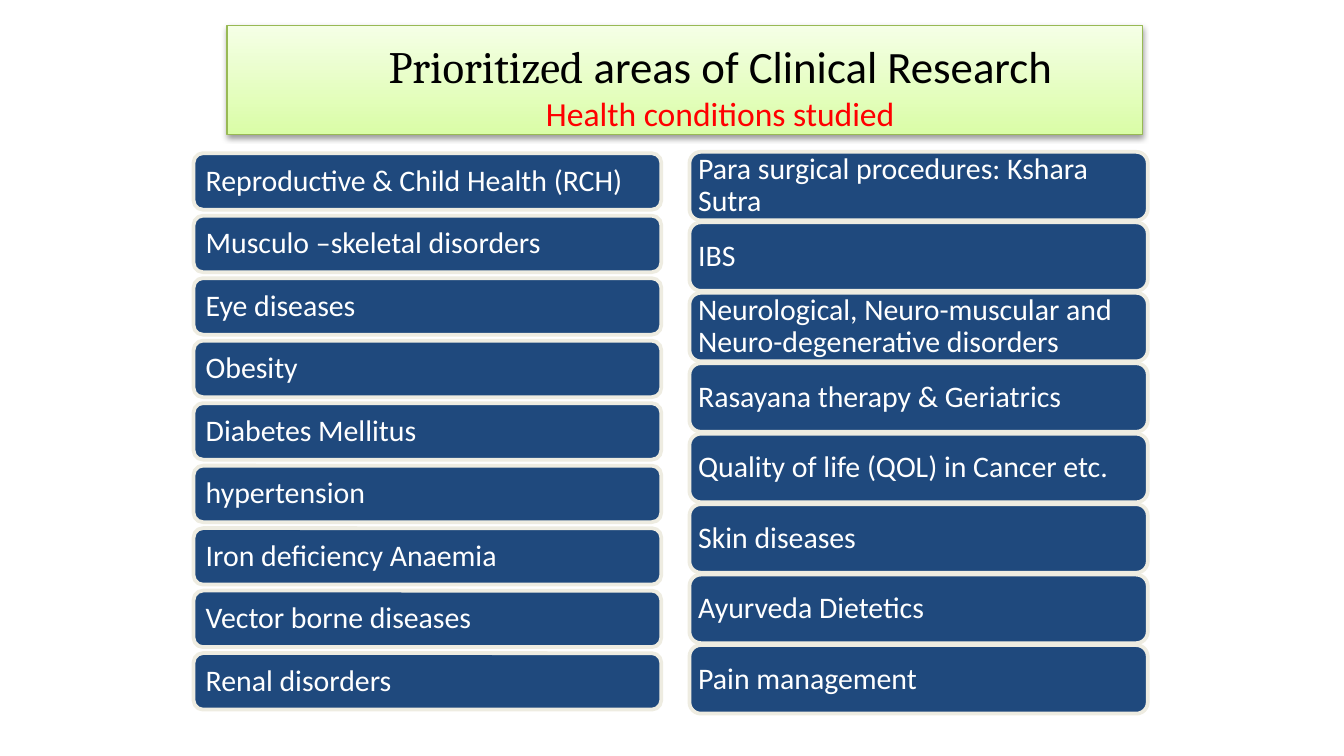
from dataclasses import dataclass

from lxml.etree import SubElement
from pptx import Presentation
from pptx.dml.color import RGBColor
from pptx.enum.shapes import MSO_SHAPE
from pptx.enum.text import MSO_ANCHOR, PP_ALIGN
from pptx.oxml.ns import qn
from pptx.util import Inches, Pt


@dataclass(frozen=True)
class Theme:
    """Colours, fonts and type sizes of the slide."""
    navy: str = "1F497D"
    cream: str = "EEECE1"
    white: str = "FFFFFF"
    black: str = "000000"
    red: str = "FF0000"
    green_line: str = "98B954"
    green_light: str = "F5FFE6"
    green_deep: str = "DAFDA7"
    body_font: str = "Calibri"
    accent_font: str = "Cambria"
    title_size: int = 24
    subtitle_size: int = 18
    item_size: int = 16


class SlideBuilder:
    """Draws styled elements on the current slide."""

    def __init__(self, slide, theme):
        self.slide = slide
        self.theme = theme

    def box(self, kind, place, line_color, line_width, frame_format):
        """Add an outlined shape and apply the text frame format."""
        shape = self.slide.shapes.add_shape(kind, *map(Inches, place))
        shape.line.color.rgb = RGBColor.from_string(line_color)
        shape.line.width = Pt(line_width)
        shape.shadow.inherit = False
        for name, value in frame_format.items():
            setattr(shape.text_frame, name, value)
        return shape

    def run(self, paragraph, text, size, color, font_name):
        """Add one formatted run to a paragraph."""
        run = paragraph.add_run()
        run.text = text
        for name, value in {"size": Pt(size), "name": font_name}.items():
            setattr(run.font, name, value)
        run.font.color.rgb = RGBColor.from_string(color)

    def banner(self, place, lines):
        """Add the gradient title banner with centred lines of runs."""
        theme = self.theme
        frame_format = {"word_wrap": True, "vertical_anchor": MSO_ANCHOR.BOTTOM,
                        "margin_bottom": Inches(0.01), "margin_top": 0}
        shape = self.box(MSO_SHAPE.RECTANGLE, place, theme.green_line, 0.75, frame_format)
        shape.fill.gradient()
        shape.fill.gradient_angle = 270
        stops = zip(shape.fill.gradient_stops, (theme.green_light, theme.green_deep))
        for position, (stop, color) in enumerate(stops):
            stop.position = position
            stop.color.rgb = RGBColor.from_string(color)
        effects = shape._element.spPr.find(qn("a:effectLst"))
        shadow = SubElement(effects, qn("a:outerShdw"), blurRad="40000", dist="20000",
                            dir="5400000", rotWithShape="0")
        shadow_color = SubElement(shadow, qn("a:srgbClr"), val=theme.black)
        SubElement(shadow_color, qn("a:alpha"), val="38000")
        paragraph = shape.text_frame.paragraphs[0]
        paragraph.alignment = PP_ALIGN.CENTER
        paragraph._p.get_or_add_pPr().set("marL", str(Inches(0.53)))
        for index, runs in enumerate(lines):
            if index:
                paragraph.add_line_break()
            for run_values in runs:
                self.run(paragraph, *run_values)

    def column(self, left, width, height, first_top, last_top, inset, items):
        """Add an evenly spaced column of rounded boxes."""
        theme = self.theme
        pitch = (last_top - first_top) / (len(items) - 1)
        frame_format = {"word_wrap": True, "vertical_anchor": MSO_ANCHOR.MIDDLE,
                        "margin_left": Inches(inset), "margin_right": Inches(inset),
                        "margin_top": 0, "margin_bottom": 0}
        for index, item in enumerate(items):
            place = (left, first_top + index * pitch, width, height)
            shape = self.box(MSO_SHAPE.ROUNDED_RECTANGLE, place, theme.cream, 2, frame_format)
            shape.fill.solid()
            shape.fill.fore_color.rgb = RGBColor.from_string(theme.navy)
            paragraph = shape.text_frame.paragraphs[0]
            for name, value in {"alignment": PP_ALIGN.LEFT, "line_spacing": 0.9}.items():
                setattr(paragraph, name, value)
            self.run(paragraph, item, theme.item_size, theme.white, theme.body_font)


def main():
    """Build and save the slide."""
    presentation = Presentation()
    presentation.slide_width = Inches(10)
    presentation.slide_height = Inches(10 * 9 / 16)
    slide = presentation.slides.add_slide(presentation.slide_layouts[6])
    theme = Theme()
    builder = SlideBuilder(slide, theme)

    builder.banner((1.69, 0.19, 6.81, 0.81), [
        [("Prioritized", theme.title_size, theme.black, theme.accent_font),
         (" areas of Clinical Research", theme.title_size, theme.black, theme.body_font)],
        [("Health conditions studied", theme.subtitle_size, theme.red, theme.body_font)],
    ])
    builder.column(1.44, 3.48, 0.42, 1.14, 4.86, 0.07, [
        "Reproductive & Child Health (RCH)",
        "Musculo –skeletal disorders",
        "Eye diseases",
        "Obesity",
        "Diabetes Mellitus",
        "hypertension",
        "Iron deficiency Anaemia",
        "Vector borne diseases",
        "Renal disorders",
    ])
    builder.column(5.13, 3.41, 0.51, 1.13, 4.8, 0.04, [
        "Para surgical procedures: Kshara Sutra",
        "IBS",
        "Neurological, Neuro-muscular and Neuro-degenerative disorders",
        "Rasayana therapy & Geriatrics",
        "Quality of life (QOL) in Cancer etc.",
        "Skin diseases",
        "Ayurveda Dietetics",
        "Pain management",
    ])
    presentation.save("out.pptx")


if __name__ == "__main__":
    main()
